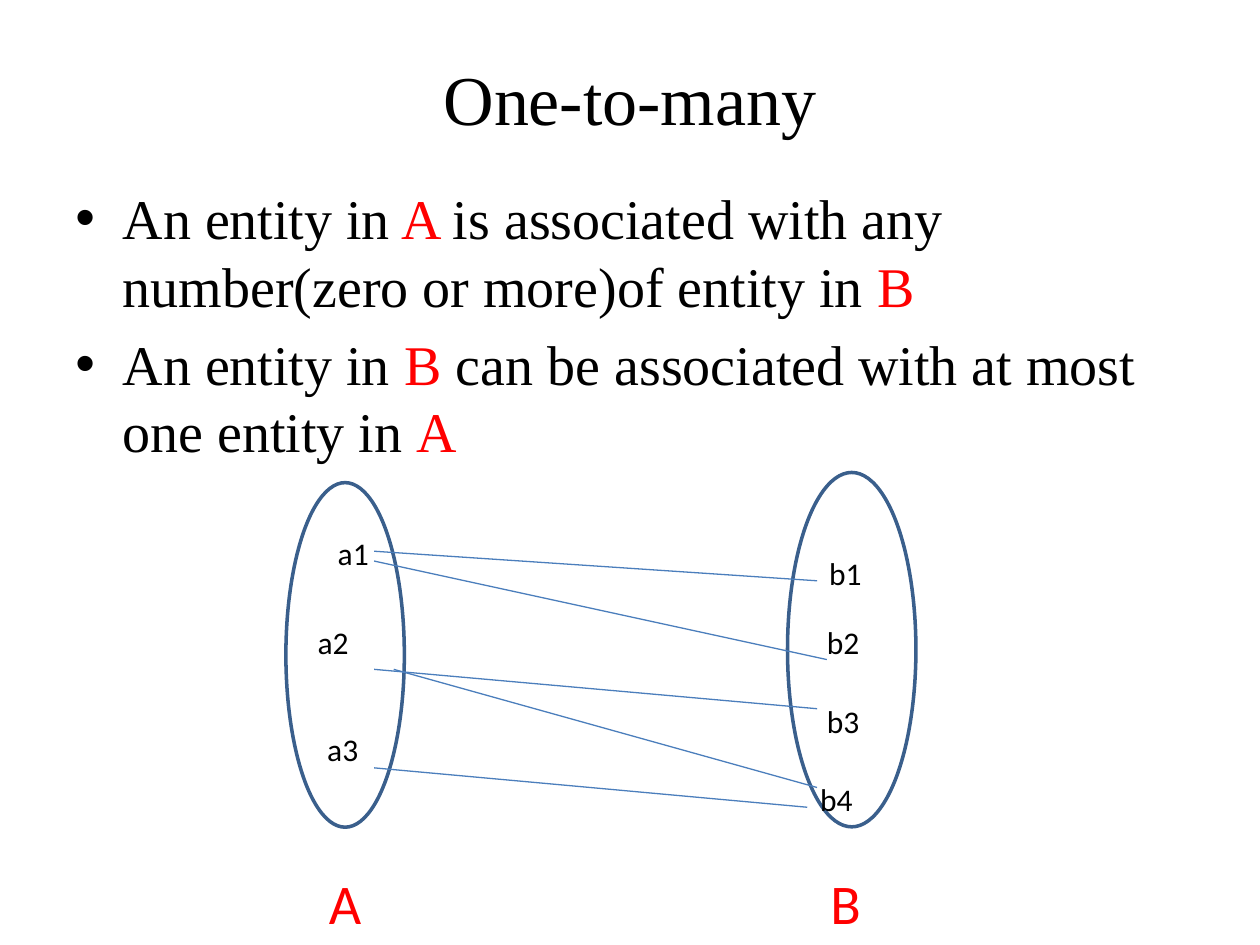
import pptx
import pptx.util
import pptx.dml.color
import pptx.enum.shapes
import pptx.enum.text
import pptx.oxml.ns
import lxml.etree

Pt = pptx.util.Pt
BLACK = pptx.dml.color.RGBColor(0x00, 0x00, 0x00)
RED = pptx.dml.color.RGBColor(0xFF, 0x00, 0x00)
WHITE = pptx.dml.color.RGBColor(0xFF, 0xFF, 0xFF)
OUTLINE = pptx.dml.color.RGBColor(0x3A, 0x5F, 0x8C)
LINK = pptx.dml.color.RGBColor(0x4B, 0x7E, 0xBC)
SERIF, SANS = "Times New Roman", "Calibri"

# Content
TITLE = "One-to-many"
RULES = [
    [("An entity in", BLACK), (" A ", RED),
     ("is associated with any number(zero or more)of entity in ", BLACK), ("B", RED)],
    [("An entity in ", BLACK), ("B", RED),
     (" can be associated with at most one entity in ", BLACK), ("A", RED)],
]
# Set outlines: left, top, width, height
SETS = [(163.4, 275.8, 67.7, 196.9), (450, 270, 73.4, 202.5)]
# Labels: text, left edge of the text, middle of the line
MEMBERS = [
    ("a1", 193, 316), ("a2", 181.5, 367), ("a3", 187, 428),
    ("b1", 473.8, 327.5), ("b2", 472.6, 367), ("b3", 472.6, 412), ("b4", 468.7, 456.5),
]
SET_NAMES = [("A", 188, 516), ("B", 474.5, 516)]
# Associations: start x, start y, end x, end y
ASSOCIATIONS = [
    (225, 382.5, 466.9, 450),
    (213.8, 315, 466.9, 331.9),
    (213.8, 320.6, 472.5, 376.9),
    (213.8, 382.5, 466.9, 405),
    (213.8, 438.8, 461.3, 461.3),
]


def add_run(paragraph, text, size, font, color):
    run = paragraph.add_run()
    run.text = text
    run.font.size = Pt(size)
    run.font.name = font
    run.font.color.rgb = color


def add_bullet(paragraph, indent):
    props = paragraph._p.get_or_add_pPr()
    props.set("marL", str(Pt(indent)))
    props.set("indent", str(-Pt(indent)))
    for tag, key, value in (("a:buFont", "typeface", "Arial"), ("a:buChar", "char", "•")):
        lxml.etree.SubElement(props, pptx.oxml.ns.qn(tag)).set(key, value)


def add_label(slide, text, left, middle, size, color):
    height = size * 1.22
    label = slide.shapes.add_textbox(Pt(left), Pt(middle - height / 2), Pt(size * 2), Pt(height))
    frame = label.text_frame
    frame.word_wrap = True
    frame.margin_left = frame.margin_right = frame.margin_top = frame.margin_bottom = 0
    add_run(frame.paragraphs[0], text, size, SANS, color)


def main():
    deck = pptx.Presentation()
    deck.slide_width, deck.slide_height = Pt(720), Pt(540)
    slide = deck.slides.add_slide(deck.slide_layouts.get_by_name("Title Only"))

    # Title
    title = slide.shapes.title
    title.left, title.top, title.width, title.height = Pt(36), Pt(21.6), Pt(648), Pt(68.4)
    title.text_frame.vertical_anchor = pptx.enum.text.MSO_ANCHOR.MIDDLE
    heading = title.text_frame.paragraphs[0]
    heading.alignment = pptx.enum.text.PP_ALIGN.CENTER
    add_run(heading, TITLE, 40, SERIF, BLACK)

    # Bulleted rules
    rules = slide.shapes.add_textbox(Pt(36), Pt(101.5), Pt(648), Pt(168)).text_frame
    rules.word_wrap = True
    for index, runs in enumerate(RULES):
        paragraph = rules.add_paragraph() if index else rules.paragraphs[0]
        paragraph.line_spacing = Pt(38.4)
        paragraph.space_before = Pt(6.4 if index else 0)
        add_bullet(paragraph, 27)
        for text, color in runs:
            add_run(paragraph, text, 32, SERIF, color)

    # Set outlines
    for bounds in SETS:
        outline = slide.shapes.add_shape(
            pptx.enum.shapes.MSO_SHAPE.OVAL, *(Pt(value) for value in bounds))
        outline.shadow.inherit = False
        outline.fill.solid()
        outline.fill.fore_color.rgb = WHITE
        outline.line.color.rgb = OUTLINE
        outline.line.width = Pt(2)

    # Members and set names
    for text, left, middle in MEMBERS:
        add_label(slide, text, left, middle, 18, BLACK)
    for text, left, middle in SET_NAMES:
        add_label(slide, text, left, middle, 32, RED)

    # Associations
    for ends in ASSOCIATIONS:
        link = slide.shapes.add_connector(
            pptx.enum.shapes.MSO_CONNECTOR.STRAIGHT, *(Pt(value) for value in ends))
        link.line.color.rgb = LINK
        link.line.width = Pt(0.75)
        lxml.etree.SubElement(link._element.spPr, pptx.oxml.ns.qn("a:effectLst"))

    deck.save("out.pptx")


if __name__ == "__main__":
    main()
